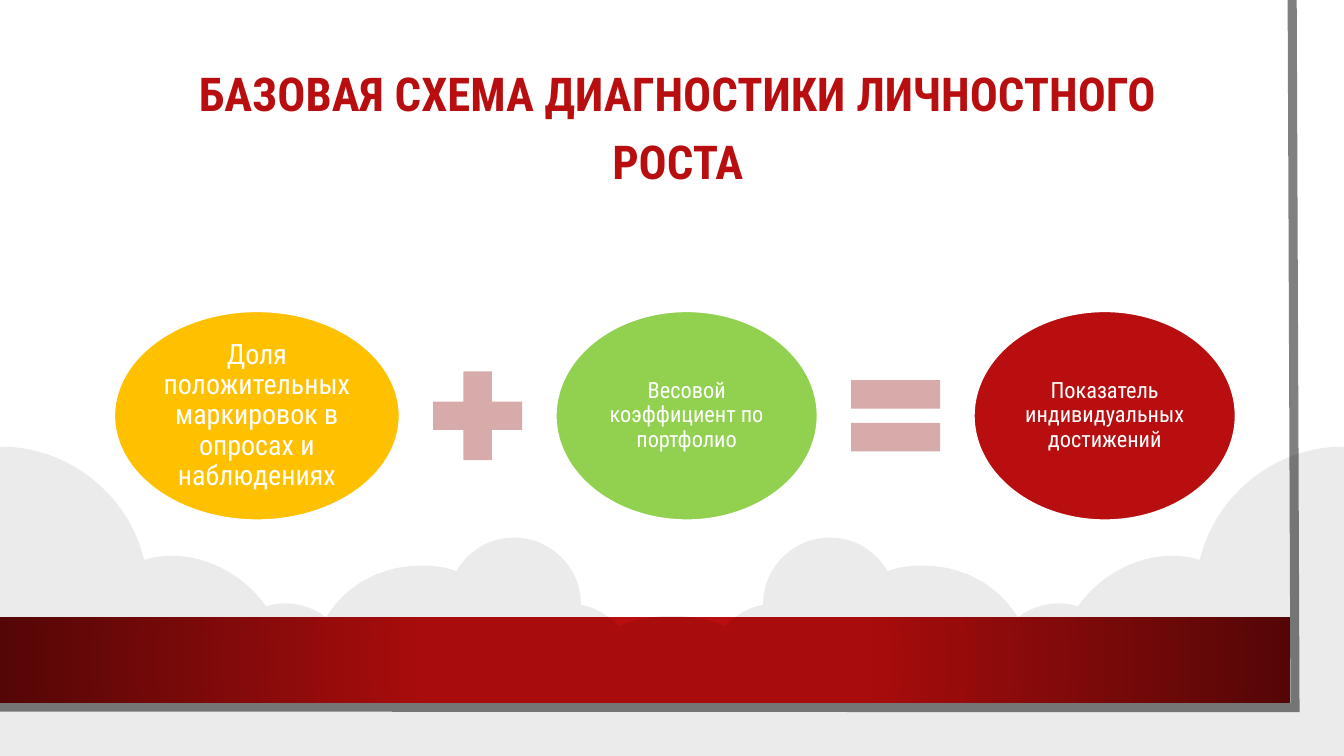
from pptx import Presentation
from pptx.dml.color import RGBColor
from pptx.enum.shapes import MSO_SHAPE
from pptx.enum.text import MSO_ANCHOR, PP_ALIGN
from pptx.oxml import parse_xml
from pptx.oxml.ns import nsdecls, qn
from pptx.util import Pt
from lxml import etree

RECTANGLE, OVAL = MSO_SHAPE.RECTANGLE, MSO_SHAPE.OVAL
PLUS, EQUAL = MSO_SHAPE.MATH_PLUS, MSO_SHAPE.MATH_EQUAL
MIDDLE, CENTER = MSO_ANCHOR.MIDDLE, PP_ALIGN.CENTER

FONT = "Roboto Condensed"
PAGE_WIDTH, PAGE_HEIGHT = 960, 540
WHITE = RGBColor(0xFF, 0xFF, 0xFF)
BLACK = RGBColor(0x00, 0x00, 0x00)
GRAY = RGBColor(0x80, 0x80, 0x80)
RED = RGBColor(0xB8, 0x0E, 0x0F)
DARK_RED = RGBColor(0x5C, 0x07, 0x07)
GOLD = RGBColor(0xFF, 0xC0, 0x00)
GREEN = RGBColor(0x92, 0xD0, 0x50)
PINK = RGBColor(0xD8, 0xAB, 0xAB)

# Left half of the cloud outline: a start, then two control points and an end per curve
CLOUD_HALF = [
    (0, 319),
    (50, 319), (92, 354), (103, 400),
    (109, 398), (116, 397), (122, 397),
    (150, 397), (175, 412), (190, 433),
    (194, 432), (199, 431), (204, 431),
    (215, 431), (225, 435), (233, 441),
    (247, 418), (272, 404), (301, 404),
    (310, 404), (318, 405), (326, 408),
    (334, 394), (349, 384), (367, 384),
    (393, 384), (415, 405), (415, 432),
    (426, 434), (435, 440), (442, 447),
    (453, 443), (464, 440), (480, 440),
]

# Kind, width, height, fill, text, text size
FORMULA = [
    (OVAL, 204, 149.5, GOLD, "Доля положительных маркировок в опросах и наблюдениях", 20),
    (PLUS, 86.4, 86.4, PINK, "", 0),
    (OVAL, 187.2, 149.5, GREEN, "Весовой коэффициент по портфолио", 16),
    (EQUAL, 86.4, 86.4, PINK, "", 0),
    (OVAL, 187.2, 149.5, RED, "Показатель индивидуальных достижений", 16),
]
FORMULA_GAP = 12.5


def write_text(shape, text, size, color, bold=False, line_spacing=1.0, inset=None):
    frame = shape.text_frame
    frame.word_wrap = True
    frame.vertical_anchor = MIDDLE
    if inset is not None:
        frame.margin_left = frame.margin_right = Pt(inset)
        frame.margin_top = frame.margin_bottom = Pt(inset)
    para = frame.paragraphs[0]
    para.alignment = CENTER
    para.line_spacing = line_spacing
    span = para.add_run()
    span.text = text
    span.font.name = FONT
    span.font.size = Pt(size)
    span.font.bold = bold
    span.font.color.rgb = color


def add_filled(page, kind, left, top, width, height, fill, outline=None):
    shape = page.shapes.add_shape(kind, Pt(left), Pt(top), Pt(width), Pt(height))
    shape.shadow.inherit = False
    shape.fill.solid()
    shape.fill.fore_color.rgb = fill
    if outline is None:
        shape.line.fill.background()
    else:
        shape.line.color.rgb = outline
        shape.line.width = Pt(1.5)
    return shape


def add_outline(page, points, close):
    start, *rest = [(Pt(x), Pt(y)) for x, y in points]
    builder = page.shapes.build_freeform(*start)
    builder.add_line_segments(rest, close=close)
    shape = builder.convert_to_shape()
    shape.shadow.inherit = False
    return shape


def bend_segments(shape, points):
    """Turn the leading straight segments into the cubic curves of points."""
    segments = shape._element.findall(".//" + qn("a:lnTo"))
    for index, segment in zip(range(1, len(points), 3), segments):
        segment.tag = qn("a:cubicBezTo")
        for place, (x, y) in enumerate(points[index:index + 2]):
            control = etree.Element(qn("a:pt"))
            control.set("x", str(Pt(x) - shape.left))
            control.set("y", str(Pt(y) - shape.top))
            segment.insert(place, control)


def fill_radial(shape, center, edge):
    """Replace the solid fill by a gradient that runs out from the middle."""
    gradient = parse_xml(
        f'<a:gradFill {nsdecls("a")} rotWithShape="1"><a:gsLst>'
        f'<a:gs pos="34000"><a:srgbClr val="{center}"/></a:gs>'
        f'<a:gs pos="100000"><a:srgbClr val="{edge}"/></a:gs></a:gsLst>'
        '<a:path path="circle"><a:fillToRect l="50000" t="50000" r="50000" b="50000"/>'
        "</a:path></a:gradFill>"
    )
    properties = shape.fill._xPr
    properties.replace(properties.find(qn("a:solidFill")), gradient)


def add_sheet(page, width, height):
    add_filled(page, RECTANGLE, 0, 0, width, height, WHITE)
    right, bottom = width - 18, height - 18
    border = add_outline(page, [(right - 2, 0), (right, bottom), (-2, bottom - 0.5)], False)
    border.fill.background()
    border.line.color.rgb = GRAY
    border.line.width = Pt(6.5)
    line = border._element.spPr.find(qn("a:ln"))
    etree.SubElement(line, qn("a:miter")).set("lim", "800000")
    band = add_filled(page, RECTANGLE, 0, 440.8, right - 3.5, 61.4, RED)
    fill_radial(band, RED, DARK_RED)


def add_clouds(page, width, bottom):
    mirrored = [(width - x, y) for x, y in reversed(CLOUD_HALF[:-1])]
    ridge = CLOUD_HALF + mirrored
    clouds = add_outline(page, ridge[::3] + [(width, bottom), (0, bottom)], True)
    bend_segments(clouds, ridge)
    clouds.fill.solid()
    clouds.fill.fore_color.rgb = BLACK
    clouds.line.fill.background()
    color = clouds.fill._xPr.find(qn("a:solidFill"))[0]
    etree.SubElement(color, qn("a:alpha")).set("val", "8000")


def add_title(page, left, top, width, height):
    box = page.shapes.add_textbox(Pt(left), Pt(top), Pt(width), Pt(height))
    write_text(box, "БАЗОВАЯ СХЕМА ДИАГНОСТИКИ ЛИЧНОСТНОГО РОСТА", 33.3, RED,
               bold=True, line_spacing=1.2)


def add_formula(page, left, middle):
    for kind, width, height, fill, text, size in FORMULA:
        outline = WHITE if text else None
        shape = add_filled(page, kind, left, middle - height / 2, width, height, fill, outline)
        if text:
            write_text(shape, text, size, WHITE, line_spacing=0.9, inset=size / 10)
        left += width + FORMULA_GAP


def main():
    deck = Presentation()
    deck.slide_width, deck.slide_height = Pt(PAGE_WIDTH), Pt(PAGE_HEIGHT)
    page = deck.slides.add_slide(deck.slide_layouts[6])
    add_sheet(page, 943, 523.5)
    add_clouds(page, PAGE_WIDTH, PAGE_HEIGHT)
    add_title(page, 106, 52.4, 756.5, 68.4)
    add_formula(page, 81.5, 297)
    deck.save("out.pptx")


if __name__ == "__main__":
    main()
